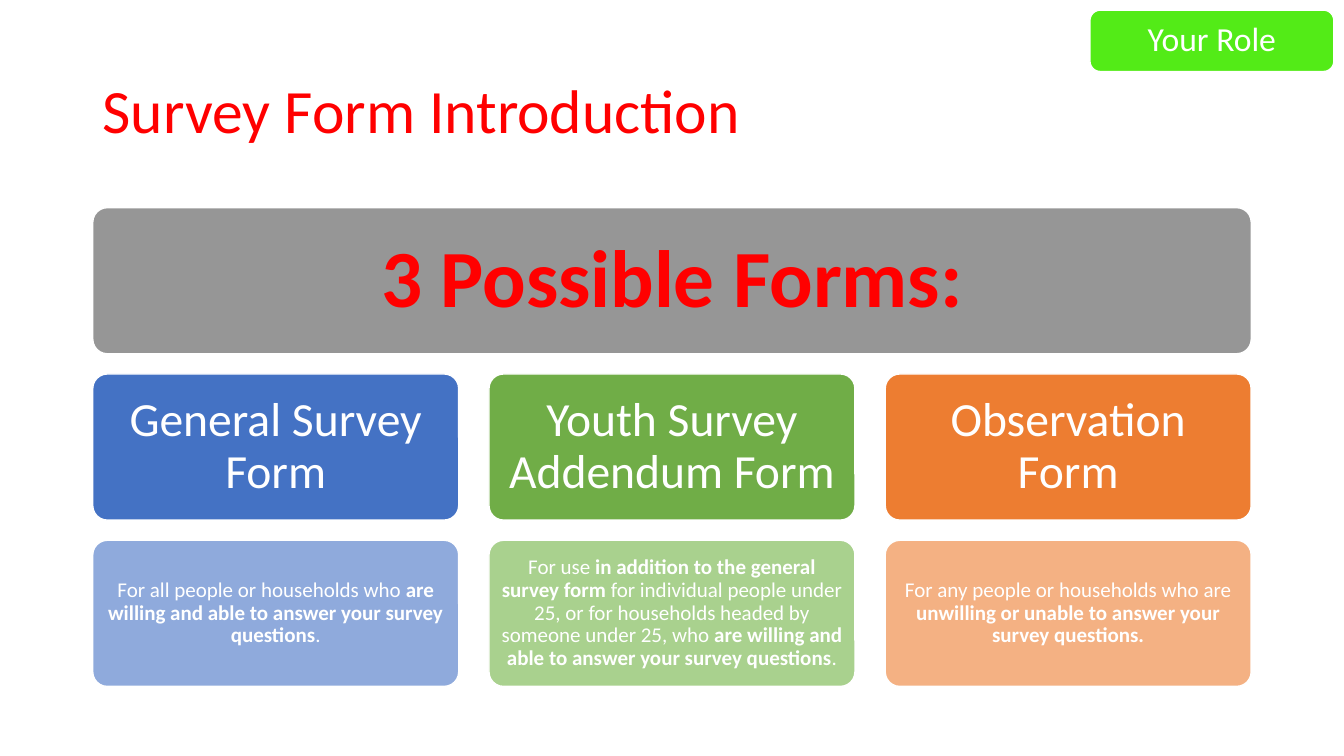
"""Build the Survey Form Introduction slide."""
from pptx import Presentation
from pptx.dml.color import RGBColor
from pptx.enum.shapes import MSO_SHAPE as SHAPE
from pptx.enum.text import MSO_ANCHOR as ANCHOR, PP_ALIGN as ALIGN
from pptx.util import Inches, Pt

WHITE = RGBColor(0xFF, 0xFF, 0xFF)
RED = RGBColor(0xFF, 0x00, 0x00)
LIME = RGBColor(0x53, 0xEB, 0x17)
GRAY = RGBColor(0x96, 0x96, 0x96)
BLUE = RGBColor(0x44, 0x72, 0xC4)
LIGHT_BLUE = RGBColor(0x8F, 0xAA, 0xDC)
GREEN = RGBColor(0x70, 0xAD, 0x47)
LIGHT_GREEN = RGBColor(0xA9, 0xD1, 0x8E)
ORANGE = RGBColor(0xED, 0x7D, 0x31)
LIGHT_ORANGE = RGBColor(0xF4, 0xB1, 0x83)

TAG = "Your Role"
TITLE = "Survey Form Introduction"
HEADING = "3 Possible Forms:"
FORMS = [
    ("General Survey Form", BLUE, LIGHT_BLUE, [
        ("For all people or households who ", False),
        ("are willing and able to answer your survey questions", True),
        (".", False)]),
    ("Youth Survey Addendum Form", GREEN, LIGHT_GREEN, [
        ("For use ", False),
        ("in addition to the general survey form", True),
        (" for individual people under 25, or for households headed by "
         "someone under 25, who ", False),
        ("are willing and able to answer your survey questions", True),
        (".", False)]),
    ("Observation Form", ORANGE, LIGHT_ORANGE, [
        ("For any people or households who are ", False),
        ("unwilling or unable to answer your survey questions.", True)]),
]

LEFT, WIDTH = 0.92, 11.49
CARD_W, CARD_H = 3.63, 1.45
TOP, ROW_STEP = 2.06, 1.65
COL_STEP = (WIDTH - CARD_W) / (len(FORMS) - 1)


def write(s, runs, size, color=WHITE, align=ALIGN.CENTER, pad=(0.1, 0.05)):
    tf = s.text_frame
    tf.word_wrap = True
    tf.vertical_anchor = ANCHOR.MIDDLE
    tf.margin_left = tf.margin_right = Inches(pad[0])
    tf.margin_top = tf.margin_bottom = Inches(pad[1])
    p = tf.paragraphs[0]
    p.alignment = align
    p.line_spacing = 0.9
    for text, bold in runs:
        r = p.add_run()
        r.text = text
        r.font.name = "Calibri"
        r.font.size = Pt(size)
        r.font.bold = bold
        r.font.color.rgb = color


def add_card(slide, x, y, w, h, fill, corner=0.1):
    s = slide.shapes.add_shape(SHAPE.ROUNDED_RECTANGLE, Inches(x), Inches(y),
                               Inches(w), Inches(h))
    s.adjustments[0] = corner
    s.shadow.inherit = False
    s.fill.solid()
    s.fill.fore_color.rgb = fill
    s.line.color.rgb = WHITE
    s.line.width = Pt(1)
    return s


def main():
    prs = Presentation()
    prs.slide_width, prs.slide_height = Inches(13.33), Inches(7.5)
    slide = prs.slides.add_slide(prs.slide_layouts[6])

    tag = add_card(slide, 10.81, 0.1, 2.42, 0.61, LIME, corner=0.17)
    write(tag, [(TAG, False)], 24, pad=(0.17, 0.09))

    title = slide.shapes.add_textbox(Inches(LEFT), Inches(0.4),
                                     Inches(11.5), Inches(CARD_H))
    write(title, [(TITLE, False)], 44, color=RED, align=ALIGN.LEFT)

    heading = add_card(slide, LEFT, TOP, WIDTH, CARD_H, GRAY)
    write(heading, [(HEADING, True)], 58, color=RED, pad=(0.24, 0.24))

    for col, (name, dark, light, use) in enumerate(FORMS):
        x = LEFT + col * COL_STEP
        rows = [(dark, [(name, False)], 34, 0.14), (light, use, 15, 0.06)]
        for row, (fill, runs, size, pad) in enumerate(rows, 1):
            card = add_card(slide, x, TOP + row * ROW_STEP, CARD_W, CARD_H, fill)
            write(card, runs, size, pad=(pad, pad))

    prs.save("out.pptx")


if __name__ == "__main__":
    main()
